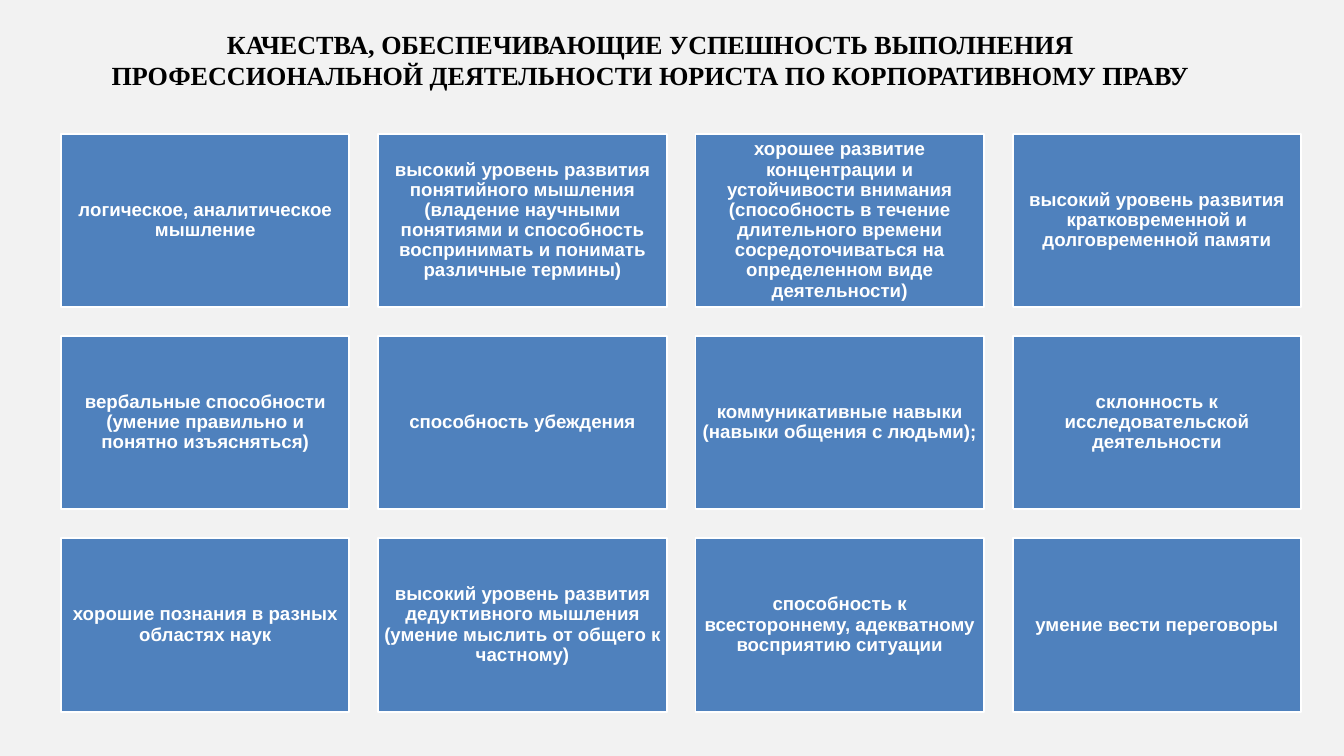
from pptx import Presentation
from pptx.dml.color import RGBColor
from pptx.enum.shapes import MSO_SHAPE as Shape
from pptx.enum.text import MSO_ANCHOR as Anchor, PP_ALIGN as Align
from pptx.util import Inches, Pt

# Content
TITLE = ("КАЧЕСТВА, ОБЕСПЕЧИВАЮЩИЕ УСПЕШНОСТЬ ВЫПОЛНЕНИЯ "
         "ПРОФЕССИОНАЛЬНОЙ ДЕЯТЕЛЬНОСТИ ЮРИСТА ПО КОРПОРАТИВНОМУ ПРАВУ")
QUALITIES = [
    "логическое, аналитическое мышление",
    "высокий уровень развития понятийного мышления (владение научными "
    "понятиями и способность воспринимать и понимать различные термины)",
    "хорошее развитие концентрации и устойчивости внимания (способность в течение "
    "длительного времени сосредоточиваться на определенном виде деятельности)",
    "высокий уровень развития кратковременной и долговременной памяти",
    "вербальные способности (умение правильно и понятно изъясняться)",
    "способность убеждения",
    "коммуникативные навыки (навыки общения с людьми);",
    "склонность к исследовательской деятельности",
    "хорошие познания в разных областях наук",
    "высокий уровень развития дедуктивного мышления (умение мыслить от общего к частному)",
    "способность к всестороннему, адекватному восприятию ситуации",
    "умение вести переговоры",
]

BACKGROUND = RGBColor(0xF2, 0xF2, 0xF2)
BLUE = RGBColor(0x4F, 0x81, 0xBD)
WHITE = RGBColor(0xFF, 0xFF, 0xFF)
BLACK = RGBColor(0x00, 0x00, 0x00)

# Grid, in inches
COLUMNS = 4
LEFT, TOP = 0.91, 1.99
CARD_W, CARD_H = 4.29, 2.58
GAP = 0.43


def write(sp, text, *, size, font, color, anchor=Anchor.TOP, inset=None, spacing=None):
    tf = sp.text_frame
    tf.word_wrap = True
    tf.vertical_anchor = anchor
    if inset is not None:
        tf.margin_left = tf.margin_right = tf.margin_top = tf.margin_bottom = Inches(inset)
    p = tf.paragraphs[0]
    p.alignment = Align.CENTER
    p.line_spacing = spacing
    r = p.add_run()
    r.text = text
    r.font.size = Pt(size)
    r.font.name = font
    r.font.bold = True
    r.font.color.rgb = color


def main():
    prs = Presentation()
    prs.slide_width, prs.slide_height = Inches(20), Inches(11.25)
    s = prs.slides.add_slide(prs.slide_layouts[6])
    s.background.fill.solid()
    s.background.fill.fore_color.rgb = BACKGROUND

    # Title
    title = s.shapes.add_textbox(Inches(1.14), Inches(0.37), Inches(17.07), Inches(1.04))
    write(title, TITLE, size=28, font="Times New Roman", color=BLACK)

    # Cards, row by row
    for i, quality in enumerate(QUALITIES):
        row, col = divmod(i, COLUMNS)
        card = s.shapes.add_shape(
            Shape.RECTANGLE,
            Inches(LEFT + col * (CARD_W + GAP)), Inches(TOP + row * (CARD_H + GAP)),
            Inches(CARD_W), Inches(CARD_H))
        card.shadow.inherit = False
        card.fill.solid()
        card.fill.fore_color.rgb = BLUE
        card.line.color.rgb = WHITE
        card.line.width = Pt(2)
        write(card, quality, size=20, font="Arial", color=WHITE,
              anchor=Anchor.MIDDLE, inset=0.08, spacing=0.9)

    prs.save("out.pptx")


if __name__ == "__main__":
    main()
